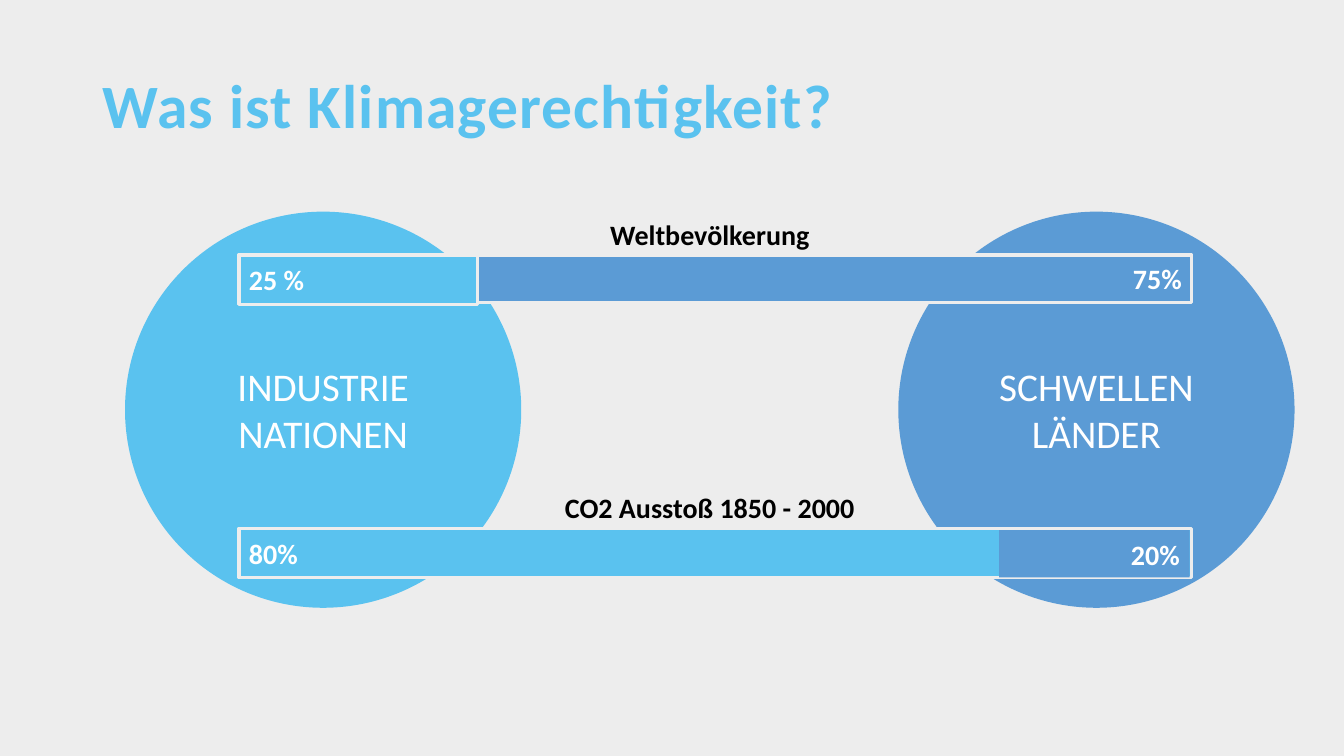
import pptx
import pptx.util
import pptx.dml.color
import pptx.enum.shapes
import pptx.enum.text

Inches, Pt = pptx.util.Inches, pptx.util.Pt
SHAPE = pptx.enum.shapes.MSO_SHAPE
ALIGN = pptx.enum.text.PP_ALIGN
ANCHOR = pptx.enum.text.MSO_ANCHOR

THEME = {
    "font": "Calibri",
    "background": "EDEDED", "industrial": "5AC2EF", "emerging": "5B9BD5",
    "on_fill": "FFFFFF", "caption": "000000",
    "title_size": 44, "group_size": 28, "bar_size": 20,
    "outline": 2.25, "title_spacing": 0.8, "caption_gap": 171,
}

TITLE = "Was ist Klimagerechtigkeit?"
CAPTIONS = ["Weltbevölkerung", "CO2 Ausstoß 1850 - 2000"]

# left edge, colour, lines
GROUPS = [
    (8.91, "emerging", ["SCHWELLEN", "LÄNDER"]),
    (1.24, "industrial", ["INDUSTRIE", "NATIONEN"]),
]
CIRCLE_TOP, CIRCLE_SIZE = 2.1, 3.93

BAR_LEFT, BAR_WIDTH = 2.37, 9.45
# label, colour, left, top, width, height, alignment, outlined; back to front
BARS = [
    ("75%", "emerging", BAR_LEFT, 2.53, BAR_WIDTH, 0.47, ALIGN.RIGHT, True),
    ("25 %", "industrial", BAR_LEFT, 2.53, BAR_WIDTH * 0.25, 0.49, ALIGN.LEFT, True),
    ("80%", "industrial", BAR_LEFT, 5.24, BAR_WIDTH, 0.49, ALIGN.LEFT, True),
    ("20%", "emerging", 9.91, 5.26, BAR_WIDTH * 0.2, 0.47, ALIGN.RIGHT, False),
]


def color(name):
    return pptx.dml.color.RGBColor.from_string(THEME[name])


def write(shape, lines, size, ink, bold, align, anchor):
    frame = shape.text_frame
    frame.word_wrap = True
    frame.vertical_anchor = anchor
    frame.text = "\n".join(lines)
    for paragraph in frame.paragraphs:
        paragraph.alignment = align
        for run in paragraph.runs:
            run.font.name = THEME["font"]
            run.font.size = Pt(THEME[size])
            run.font.bold = bold
            run.font.color.rgb = color(ink)


def add_filled(slide, preset, box, fill, outlined=False):
    shape = slide.shapes.add_shape(preset, *map(Inches, box))
    shape.shadow.inherit = False
    shape.fill.solid()
    shape.fill.fore_color.rgb = color(fill)
    if outlined:
        shape.line.color.rgb = color("background")
        shape.line.width = Pt(THEME["outline"])
    else:
        shape.line.fill.background()
    return shape


def add_text(slide, box):
    return slide.shapes.add_textbox(*map(Inches, box))


def main():
    deck = pptx.Presentation()
    deck.slide_width, deck.slide_height = Inches(13.33), Inches(7.5)
    slide = deck.slides.add_slide(deck.slide_layouts[6])
    slide.background.fill.solid()
    slide.background.fill.fore_color.rgb = color("background")

    for left, fill, lines in GROUPS:
        circle = add_filled(slide, SHAPE.OVAL,
                            (left, CIRCLE_TOP, CIRCLE_SIZE, CIRCLE_SIZE), fill)
        write(circle, lines, "group_size", "on_fill", False, ALIGN.CENTER, ANCHOR.MIDDLE)

    title = add_text(slide, (0.92, 0.35, 11.5, 1.45))
    write(title, [TITLE], "title_size", "industrial", True, ALIGN.LEFT, ANCHOR.MIDDLE)
    title.text_frame.paragraphs[0].line_spacing = 0.9
    for properties in title.element.xpath(".//a:rPr"):
        properties.set("spc", str(round(THEME["title_spacing"] * 100)))

    for label, fill, left, top, width, height, align, outlined in BARS:
        bar = add_filled(slide, SHAPE.RECTANGLE, (left, top, width, height), fill, outlined)
        write(bar, [label], "bar_size", "on_fill", True, align, ANCHOR.MIDDLE)

    captions = add_text(slide, (5.17, 2.11, 3.74, 3.13))
    write(captions, CAPTIONS, "bar_size", "caption", True, ALIGN.CENTER, ANCHOR.TOP)
    captions.text_frame.paragraphs[1].space_before = Pt(THEME["caption_gap"])

    deck.save("out.pptx")


if __name__ == "__main__":
    main()
